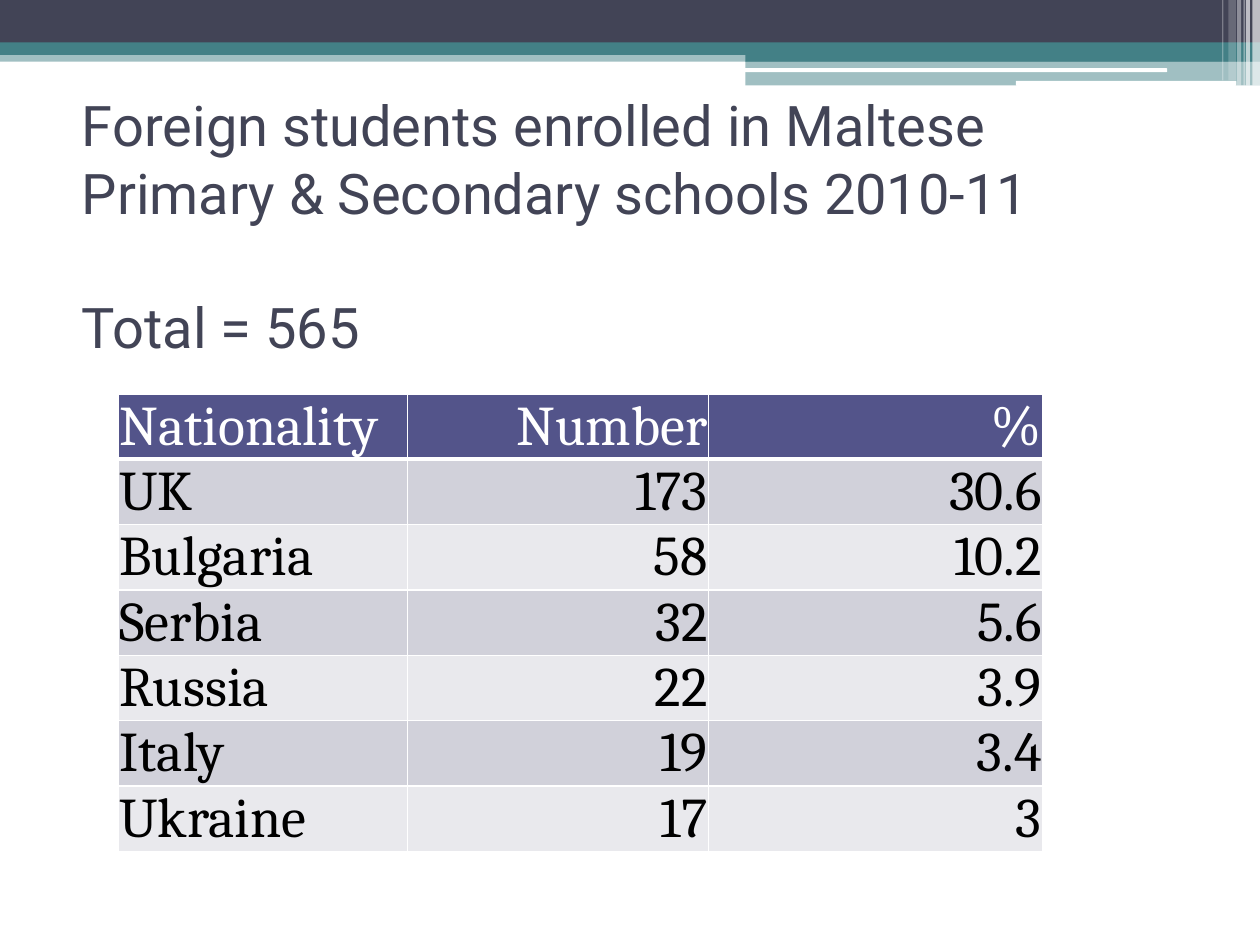
from lxml import etree
from pptx import Presentation
from pptx.dml.color import RGBColor
from pptx.enum import shapes, text
from pptx.oxml.ns import qn
from pptx.util import Pt

WHITE = RGBColor(0xFF, 0xFF, 0xFF)
BLACK = RGBColor(0, 0, 0)
SLATE = RGBColor(0x42, 0x44, 0x56)
TEAL = RGBColor(0x43, 0x80, 0x86)
INDIGO = RGBColor(0x53, 0x54, 0x8A)
BAND_DARK = RGBColor(0xD1, 0xD1, 0xDA)
BAND_LIGHT = RGBColor(0xE9, 0xE9, 0xED)
RECT = shapes.MSO_SHAPE.RECTANGLE
ROUND = shapes.MSO_SHAPE.ROUNDED_RECTANGLE


def add_bar(kind, left, top, width, height, color, opacity=100):
    sp = slide.shapes.add_shape(kind, Pt(left), Pt(top), Pt(width), Pt(height))
    sp.shadow.inherit = False
    sp.line.fill.background()
    sp.fill.solid()
    sp.fill.fore_color.rgb = color
    if opacity < 100:
        clr = sp.fill._xPr.find(".//" + qn("a:srgbClr"))
        etree.SubElement(clr, qn("a:alpha"), val=str(opacity * 1000))


def set_border(cell, side, width):
    """Give one side (L, R, T or B) of a cell a white line; call before the fill is set."""
    ln = etree.SubElement(cell._tc.get_or_add_tcPr(), qn("a:ln" + side), w=str(Pt(width)))
    fill = etree.SubElement(ln, qn("a:solidFill"))
    etree.SubElement(fill, qn("a:srgbClr"), val=str(WHITE))


prs = Presentation()
prs.slide_width, prs.slide_height = Pt(720), Pt(540)
slide = prs.slides.add_slide(prs.slide_layouts[5])

# Header bands
for kind, left, top, width, height, color, opacity in [
    (RECT, 0, 28.8, 720, 6.5, TEAL, 50),
    (RECT, 0, 0, 720, 24.5, SLATE, 100),
    (RECT, 0, 24.2, 720, 7.2, TEAL, 100),
    (RECT, 426, 28, 294, 7.2, TEAL, 100),
    (RECT, 426, 34.8, 294, 14, TEAL, 50),
    (ROUND, 425.5, 39, 241.5, 2.2, WHITE, 100),
    (ROUND, 580.5, 46.2, 126, 2.8, WHITE, 100),
]:
    add_bar(kind, left, top, width, height, color, opacity)

# Vertical stripes at the right end
for left, width, height, opacity in [
    (715.7, 4.3, 49, 65),
    (712, 2.2, 49, 65),
    (710.6, 0.7, 49, 60),
    (707, 2.2, 49, 40),
    (702, 4.3, 46, 20),
    (698.4, 0.7, 46, 30),
]:
    add_bar(RECT, left, 0, width, height, WHITE, opacity)

# Title
title = slide.shapes.title
title.left, title.top, title.width, title.height = Pt(39.6), Pt(52), Pt(648), Pt(154)
tf = title.text_frame
tf.word_wrap = True
tf.auto_size = text.MSO_AUTO_SIZE.NONE
tf.vertical_anchor = text.MSO_ANCHOR.TOP
tf.margin_top = tf.margin_bottom = 0
tf.text = "Foreign students enrolled in Maltese Primary & Secondary schools 2010-11\nTotal = 565"
for p in tf.paragraphs:
    p.alignment = text.PP_ALIGN.LEFT
    p.font.name, p.font.size, p.font.color.rgb = "Roboto", Pt(32), SLATE
tf.paragraphs[1].space_before = Pt(38.4)

# Enrolment table
rows = [
    ("Nationality", "Number", "%"),
    ("UK", "173", "30.6"),
    ("Bulgaria", "58", "10.2"),
    ("Serbia", "32", "5.6"),
    ("Russia", "22", "3.9"),
    ("Italy", "19", "3.4"),
    ("Ukraine", "17", "3"),
]
col_widths = [165, 172, 191]
row_height = 37.3
table = slide.shapes.add_table(
    len(rows), len(col_widths), Pt(67.8), Pt(225),
    Pt(sum(col_widths)), Pt(row_height * len(rows))).table
for col, width in zip(table.columns, col_widths):
    col.width = Pt(width)

for i, row in enumerate(rows):
    table.rows[i].height = Pt(row_height)
    for j, value in enumerate(row):
        cell = table.cell(i, j)
        for side in "LRTB":
            under_header = (i, side) in [(0, "B"), (1, "T")]
            set_border(cell, side, 3 if under_header else 1)
        cell.fill.solid()
        cell.fill.fore_color.rgb = INDIGO if i == 0 else BAND_DARK if i % 2 else BAND_LIGHT
        cell.vertical_anchor = text.MSO_ANCHOR.BOTTOM
        cell.margin_left = cell.margin_right = cell.margin_top = Pt(0.5)
        cell.margin_bottom = 0
        cell.text = value
        p = cell.text_frame.paragraphs[0]
        p.alignment = text.PP_ALIGN.RIGHT if j else text.PP_ALIGN.LEFT
        p.font.name, p.font.size, p.font.bold = "Cambria", Pt(32), False
        p.font.color.rgb = BLACK if i else WHITE

prs.save("out.pptx")
